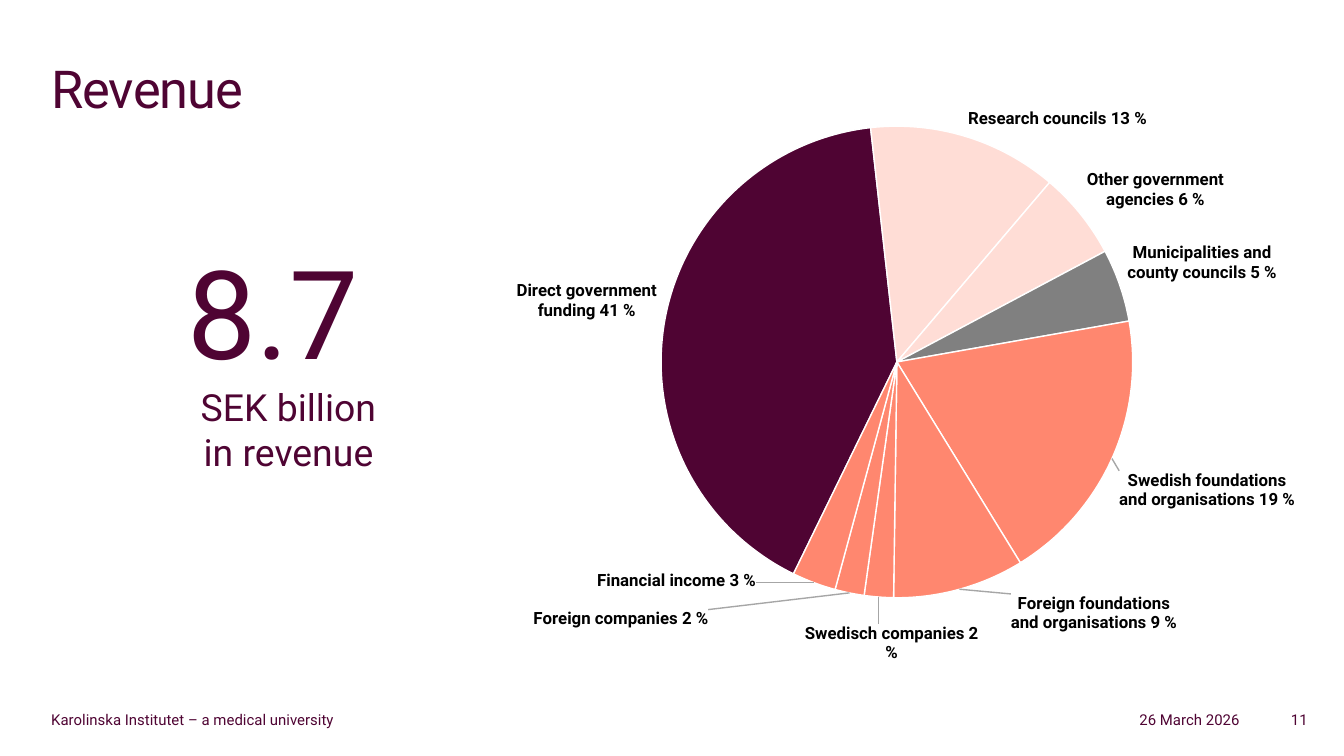
"""Build the revenue slide: a headline figure and a pie chart of funding sources."""
import dataclasses

import lxml.etree
import pptx
import pptx.chart.data
import pptx.dml.color
import pptx.enum.chart
import pptx.enum.text
import pptx.oxml
import pptx.oxml.ns
import pptx.util


@dataclasses.dataclass(frozen=True)
class Theme:
    font: str = "Roboto"
    plum: str = "4F0433"
    blush: str = "FFDDD6"
    grey: str = "808080"
    coral: str = "FF876F"
    white: str = "FFFFFF"
    black: str = "000000"
    leader: str = "A6A6A6"
    title_size: int = 28
    figure_size: int = 66
    caption_size: int = 20
    footer_size: int = 8
    chart_size: int = 10
    label_size: int = 9


theme = Theme()
EMU_PER_PX = 914400 / 134.4
ALIGN = pptx.enum.text.PP_ALIGN
ANCHOR = pptx.enum.text.MSO_ANCHOR
OUTSIDE_END = pptx.enum.chart.XL_LABEL_POSITION.OUTSIDE_END


def px(*lengths):
    return [pptx.util.Emu(round(length * EMU_PER_PX)) for length in lengths]


def style(font, size, color):
    font.name = theme.font
    font.size = pptx.util.Pt(size)
    font.color.rgb = pptx.dml.color.RGBColor.from_string(color)


presentation = pptx.Presentation()
presentation.slide_width, presentation.slide_height = px(1344, 756)
slide = presentation.slides.add_slide(presentation.slide_layouts[5])

title = slide.shapes.title
title.left, title.top, title.width, title.height = px(38, 50, 1269, 126)
title.text_frame.text = "Revenue"
title.text_frame.vertical_anchor = ANCHOR.TOP
title_paragraph = title.text_frame.paragraphs[0]
title_paragraph.alignment = ALIGN.LEFT
style(title_paragraph.runs[0].font, theme.title_size, theme.plum)
title_paragraph.runs[0].font._element.set("spc", "-50")

footers = [
    ("Karolinska Institutet – a medical university", 38, 380, ALIGN.LEFT),
    ("26 March 2026", 973, 280, ALIGN.RIGHT),
    ("11", 1220, 101, ALIGN.RIGHT),
]
for text, left, width, alignment in footers:
    footer = slide.shapes.add_textbox(*px(left, 707, width, 26))
    frame = footer.text_frame
    frame.word_wrap = True
    frame.margin_top = frame.margin_bottom = 0
    frame.vertical_anchor = ANCHOR.MIDDLE
    frame.text = text
    frame.paragraphs[0].alignment = alignment
    style(frame.paragraphs[0].runs[0].font, theme.footer_size, theme.plum)

headline = slide.shapes.add_textbox(*px(42, 230, 493, 252))
headline.text_frame.word_wrap = True
headline.text_frame.text = "8.7 \vSEK billion\nin revenue"
for paragraph in headline.text_frame.paragraphs:
    paragraph.alignment = ALIGN.CENTER
    for run in paragraph.runs:
        style(run.font, theme.caption_size, theme.plum)
headline.text_frame.paragraphs[0].runs[0].font.size = pptx.util.Pt(theme.figure_size)

CHART_WIDTH, CHART_HEIGHT = 896, 597
sources = [
    ("Direct government funding 41 %", 41, theme.plum, None),
    ("Research councils 13 %", 13, theme.blush, None),
    ("Other government agencies 6 %", 6, theme.blush, None),
    ("Municipalities and county councils 5 %", 5, theme.grey, None),
    ("Swedish foundations and organisations 19 %", 19, theme.coral, (0, 9)),
    ("Foreign foundations and organisations 9 %", 9, theme.coral, (49, -3)),
    ("Swedisch companies 2 %", 2, theme.coral, (13, 19)),
    ("Foreign companies 2 %", 2, theme.coral, (-140, 9)),
    ("Financial income 3 %", 3, theme.coral, (-56, -19)),
]
chart_data = pptx.chart.data.CategoryChartData()
chart_data.categories = [source[0] for source in sources]
chart_data.add_series("Series 1", [source[1] for source in sources])
chart = slide.shapes.add_chart(
    pptx.enum.chart.XL_CHART_TYPE.PIE, *px(453, 66, CHART_WIDTH, CHART_HEIGHT), chart_data
).chart
chart.has_title = False
chart.has_legend = False
style(chart.font, theme.chart_size, theme.black)
plot = chart.plots[0]
plot.vary_by_categories = True
series = plot.series[0]

labels = series.data_labels
labels.show_category_name = True
labels.show_value = False
labels.position = OUTSIDE_END
style(labels.font, theme.label_size, theme.black)
labels.font.bold = True

for index, (name, value, color, offset) in enumerate(sources):
    point = series.points[index]
    point.format.fill.solid()
    point.format.fill.fore_color.rgb = pptx.dml.color.RGBColor.from_string(color)
    point.format.line.color.rgb = pptx.dml.color.RGBColor.from_string(theme.white)
    point.format.line.width = pptx.util.Pt(0.75)
    if offset:
        label = point.data_label
        label.position = OUTSIDE_END
        style(label.font, theme.label_size, theme.black)
        label.font.bold = True

C = "{%s}" % pptx.oxml.ns.nsdecls("c").split('"')[1]
moves = [source[3] for source in sources if source[3]]
layouts = [
    (element, 1, {"x": round(across / CHART_WIDTH, 3), "y": round(down / CHART_HEIGHT, 3)})
    for element, (across, down) in zip(chart.element.xpath(".//c:dLbl"), moves)
]
for element, position, values in layouts:
    element.find(C + "showVal").set("val", "0")
    element.find(C + "showCatName").set("val", "1")

plot_area = chart.element.xpath(".//c:plotArea")[0]
for old_layout in plot_area.findall(C + "layout"):
    plot_area.remove(old_layout)
pie_frame = {"layoutTarget": "inner", "xMode": "edge", "yMode": "edge",
             "x": 0.232, "y": 0.101, "w": 0.527, "h": 0.79}
layouts.append((plot_area, 0, pie_frame))
for element, position, values in layouts:
    layout = lxml.etree.Element(C + "layout")
    manual = lxml.etree.SubElement(layout, C + "manualLayout")
    for key, value in values.items():
        lxml.etree.SubElement(manual, C + key).set("val", str(value))
    element.insert(position, layout)

pie = plot_area.find(C + "pieChart")
for old_angle in pie.findall(C + "firstSliceAng"):
    pie.remove(old_angle)
lxml.etree.SubElement(pie, C + "firstSliceAng").set("val", "206")

series_labels = pie.find(C + "ser").find(C + "dLbls")
for old_switch in series_labels.findall(C + "showLeaderLines"):
    series_labels.remove(old_switch)
lxml.etree.SubElement(series_labels, C + "showLeaderLines").set("val", "1")
series_labels.append(pptx.oxml.parse_xml(
    f'<c:leaderLines {pptx.oxml.ns.nsdecls("c", "a")}><c:spPr><a:ln w="9525"><a:solidFill>'
    f'<a:srgbClr val="{theme.leader}"/></a:solidFill></a:ln></c:spPr></c:leaderLines>'
))

presentation.save("out.pptx")
